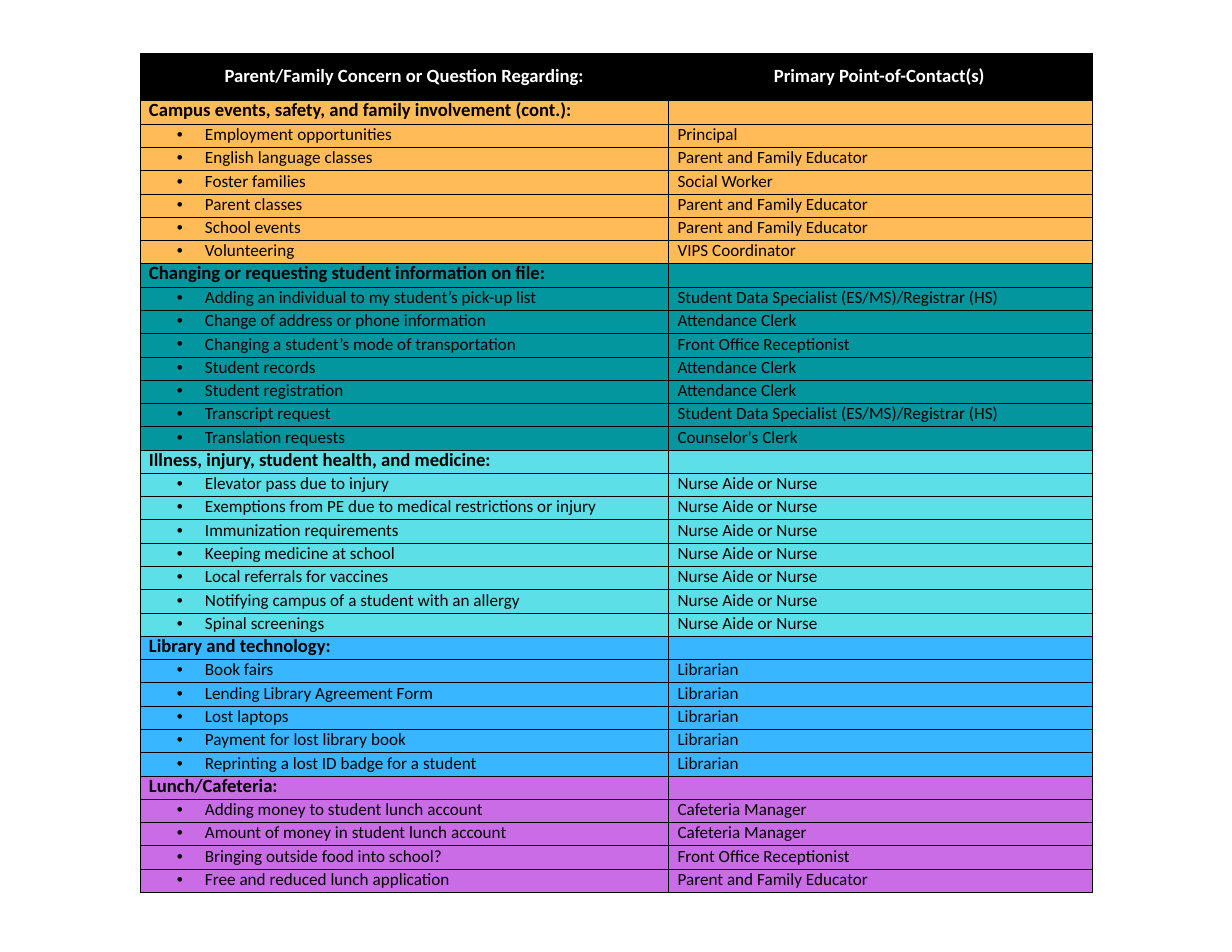
import pptx
import pptx.dml.color
import pptx.enum.text
import pptx.oxml
import pptx.oxml.ns
import pptx.util
from pptx.util import Inches

FONT = "Calibri"
COLORS = {
    "black": "000000",
    "white": "FFFFFF",
    "orange": "FFBB57",
    "teal": "03969E",
    "aqua": "5CDFE6",
    "blue": "38B6FF",
    "purple": "C96CE6",
}

LEFT, TOP = 1.25, 0.48
COLUMN_WIDTHS = (4.72, 3.78)
TABLE_HEIGHT, HEADER_HEIGHT = 7.49, 0.42
TEXT_INDENT, BULLET_INDENT, BULLET_HANG = 0.08, 0.58, 0.25

EDUCATOR = "Parent and Family Educator"
CLERK = "Attendance Clerk"
RECEPTIONIST = "Front Office Receptionist"
REGISTRAR = "Student Data Specialist (ES/MS)/Registrar (HS)"
NURSE = "Nurse Aide or Nurse"
LIBRARIAN = "Librarian"
CAFETERIA = "Cafeteria Manager"

SECTIONS = [
    ("Campus events, safety, and family involvement (cont.):", "orange", [
        ("Employment opportunities", "Principal"),
        ("English language classes", EDUCATOR),
        ("Foster families", "Social Worker"),
        ("Parent classes", EDUCATOR),
        ("School events", EDUCATOR),
        ("Volunteering", "VIPS Coordinator"),
    ]),
    ("Changing or requesting student information on file:", "teal", [
        ("Adding an individual to my student’s pick-up list", REGISTRAR),
        ("Change of address or phone information", CLERK),
        ("Changing a student’s mode of transportation", RECEPTIONIST),
        ("Student records", CLERK),
        ("Student registration", CLERK),
        ("Transcript request", REGISTRAR),
        ("Translation requests", "Counselor's Clerk"),
    ]),
    ("Illness, injury, student health, and medicine:", "aqua", [
        ("Elevator pass due to injury", NURSE),
        ("Exemptions from PE due to medical restrictions or injury", NURSE),
        ("Immunization requirements", NURSE),
        ("Keeping medicine at school", NURSE),
        ("Local referrals for vaccines", NURSE),
        ("Notifying campus of a student with an allergy", NURSE),
        ("Spinal screenings", NURSE),
    ]),
    ("Library and technology:", "blue", [
        ("Book fairs", LIBRARIAN),
        ("Lending Library Agreement Form", LIBRARIAN),
        ("Lost laptops", LIBRARIAN),
        ("Payment for lost library book", LIBRARIAN),
        ("Reprinting a lost ID badge for a student", LIBRARIAN),
    ]),
    ("Lunch/Cafeteria:", "purple", [
        ("Adding money to student lunch account", CAFETERIA),
        ("Amount of money in student lunch account", CAFETERIA),
        ("Bringing outside food into school?", RECEPTIONIST),
        ("Free and reduced lunch application", EDUCATOR),
    ]),
]


def add_xml(parent, xml):
    namespace = pptx.oxml.ns.nsdecls("a")
    parent.append(pptx.oxml.parse_xml(xml.replace(" ", f" {namespace} ", 1)))


def style_cell(cell, color, top_margin=0):
    """Give the cell its borders, fill and margins."""
    properties = cell._tc.get_or_add_tcPr()
    for side in "LRTB":
        add_xml(properties,
                f'<a:ln{side} w="6350"><a:solidFill><a:srgbClr val="{COLORS["black"]}"/>'
                f'</a:solidFill></a:ln{side}>')
    cell.fill.solid()
    cell.fill.fore_color.rgb = pptx.dml.color.RGBColor.from_string(COLORS[color])
    cell.margin_left = cell.margin_right = cell.margin_bottom = 0
    cell.margin_top = Inches(top_margin)


def write(cell, text, size=11, bold=False, color="black", indent=TEXT_INDENT,
          before=0.1, line=None, bullet=False, centered=False):
    para = cell.text_frame.paragraphs[0]
    para.space_before = pptx.util.Pt(before)
    if line:
        para.line_spacing = pptx.util.Pt(line)
    if centered:
        para.alignment = pptx.enum.text.PP_ALIGN.CENTER
    properties = para._p.get_or_add_pPr()
    properties.set("marL", str(Inches(indent)))
    properties.set("indent", str(-Inches(BULLET_HANG) if bullet else 0))
    if bullet:
        add_xml(properties, '<a:buFont typeface="Arial"/>')
        add_xml(properties, '<a:buChar char="•"/>')
    span = para.add_run()
    span.text = text
    span.font.name = FONT
    span.font.size = pptx.util.Pt(size)
    span.font.bold = bold
    span.font.color.rgb = pptx.dml.color.RGBColor.from_string(COLORS[color])


def fill_header(row):
    concern, contact = row.cells
    for cell in (concern, contact):
        style_cell(cell, "black", top_margin=0.1)
    header = {"size": 12, "bold": True, "color": "white", "before": 7}
    write(concern, "Parent/Family Concern or Question Regarding:",
          indent=0, centered=True, **header)
    write(contact, "Primary Point-of-Contact(s)", indent=0.94, **header)


def fill_heading(row, title, color):
    heading, blank = row.cells
    for cell in (heading, blank):
        style_cell(cell, color)
    write(heading, title, size=12, bold=True, before=0, line=13.6)
    # A small end mark keeps the blank cell from stretching its row.
    add_xml(blank.text_frame.paragraphs[0]._p, '<a:endParaRPr sz="1100"/>')


def fill_entry(row, concern, contact, color):
    for cell in row.cells:
        style_cell(cell, color)
    write(row.cells[0], concern, indent=BULLET_INDENT, bullet=True)
    write(row.cells[1], contact)


def add_contact_table(page):
    row_count = 1 + sum(1 + len(entries) for _, _, entries in SECTIONS)
    table = page.shapes.add_table(
        row_count, len(COLUMN_WIDTHS), Inches(LEFT), Inches(TOP),
        Inches(sum(COLUMN_WIDTHS)), Inches(TABLE_HEIGHT)).table
    table.first_row = table.horz_banding = False
    for column, width in zip(table.columns, COLUMN_WIDTHS):
        column.width = Inches(width)
    for row in table.rows:
        row.height = Inches((TABLE_HEIGHT - HEADER_HEIGHT) / (row_count - 1))
    table.rows[0].height = Inches(HEADER_HEIGHT)

    rows = iter(table.rows)
    fill_header(next(rows))
    for title, color, entries in SECTIONS:
        fill_heading(next(rows), title, color)
        for concern, contact in entries:
            fill_entry(next(rows), concern, contact, color)


def main():
    deck = pptx.Presentation()
    deck.slide_width, deck.slide_height = Inches(11), Inches(8.5)
    page = deck.slides.add_slide(deck.slide_layouts[6])
    add_contact_table(page)
    deck.save("out.pptx")


if __name__ == "__main__":
    main()
